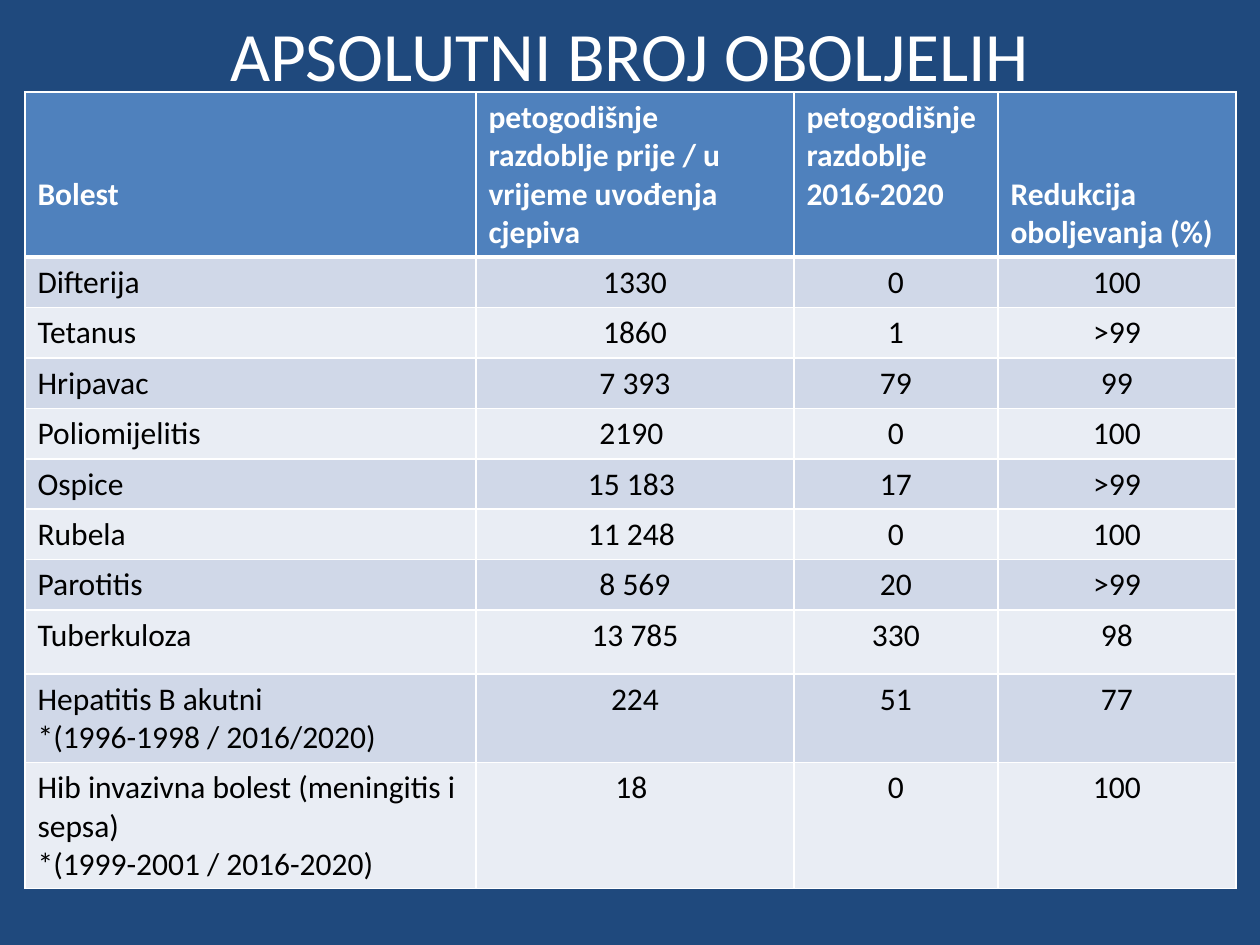
from lxml.etree import SubElement
from pptx import Presentation
from pptx.dml.color import RGBColor
from pptx.enum.text import MSO_ANCHOR, PP_ALIGN
from pptx.oxml.ns import qn
from pptx.util import Emu, Pt

PX = 914400 // 126
FONT = "Calibri"
COLORS = {
    "background": "1F497D",
    "header": "4F81BD",
    "odd": "D0D8E8",
    "even": "E9EDF4",
    "white": "FFFFFF",
    "black": "000000",
}

TITLE = "APSOLUTNI BROJ OBOLJELIH"
HEADINGS = [
    ["Bolest"],
    ["petogodišnje razdoblje prije / u vrijeme uvođenja cjepiva"],
    ["petogodišnje razdoblje", "2016-2020"],
    ["Redukcija oboljevanja (%)"],
]
DISEASES = [
    (["Difterija"], "1330", "0", "100"),
    (["Tetanus"], "1860", "1", ">99"),
    (["Hripavac"], "7 393", "79", "99"),
    (["Poliomijelitis"], "2190 ", "0", "100"),
    (["Ospice"], "15 183 ", "17", ">99"),
    (["Rubela"], "11 248 ", "0", "100"),
    (["Parotitis"], "8 569", "20", ">99"),
    (["Tuberkuloza"], "13 785", "330", "98"),
    (["Hepatitis B akutni", "*(1996-1998 / 2016/2020)"], "224", "51", "77"),
    (["Hib invazivna bolest (meningitis i sepsa)", "*(1999-2001 / 2016-2020)"],
     "18 ", "0", "100"),
]
COLUMN_WIDTHS = [451, 318, 204, 238]
ROW_HEIGHTS = [163, 48, 48, 50, 48, 48, 48, 48, 64, 84, 120]
LOWERED_HEADINGS = (0, 3)
LOWERED_MARGIN = 83


def px(value):
    return Emu(value * PX)


def rgb(name):
    return RGBColor.from_string(COLORS[name])


def write(frame, lines, size, color, align, bold=False):
    for i, line in enumerate(lines):
        paragraph = frame.paragraphs[0] if i == 0 else frame.add_paragraph()
        paragraph.alignment = align
        run = paragraph.add_run()
        run.text = line
        run.font.name = FONT
        run.font.size = Pt(size)
        run.font.bold = bold
        run.font.color.rgb = rgb(color)


def add_borders(cell, top, bottom):
    properties = cell._tc.get_or_add_tcPr()
    for side, width in (("L", 1), ("R", 1), ("T", top), ("B", bottom)):
        border = SubElement(properties, qn(f"a:ln{side}"), w=str(Pt(width)))
        fill = SubElement(border, qn("a:solidFill"))
        SubElement(fill, qn("a:srgbClr"), val=COLORS["white"])


def add_title(slide):
    title = slide.shapes.add_textbox(px(63), px(16), px(1134), px(76))
    frame = title.text_frame
    frame.word_wrap = True
    frame.vertical_anchor = MSO_ANCHOR.MIDDLE
    write(frame, [TITLE], 39.6, "white", PP_ALIGN.CENTER)


def add_disease_table(slide):
    table = slide.shapes.add_table(
        len(ROW_HEIGHTS), len(COLUMN_WIDTHS), px(25), px(92),
        px(sum(COLUMN_WIDTHS)), px(sum(ROW_HEIGHTS))).table
    for column, width in zip(table.columns, COLUMN_WIDTHS):
        column.width = px(width)
    for row, height in zip(table.rows, ROW_HEIGHTS):
        row.height = px(height)

    body = [[names] + [[value] for value in values] for names, *values in DISEASES]
    for r, row in enumerate([HEADINGS] + body):
        heading = r == 0
        band = "header" if heading else "odd" if r % 2 else "even"
        for c, lines in enumerate(row):
            cell = table.cell(r, c)
            add_borders(cell, 3 if r == 1 else 1, 3 if heading else 1)
            cell.fill.solid()
            cell.fill.fore_color.rgb = rgb(band)
            if heading and c in LOWERED_HEADINGS:
                cell.margin_top = px(LOWERED_MARGIN)
            align = PP_ALIGN.LEFT if heading or c == 0 else PP_ALIGN.CENTER
            write(cell.text_frame, lines, 18, "white" if heading else "black",
                  align, heading)


def main():
    deck = Presentation()
    deck.slide_width, deck.slide_height = px(1260), px(945)
    slide = deck.slides.add_slide(deck.slide_layouts[6])
    slide.background.fill.solid()
    slide.background.fill.fore_color.rgb = rgb("background")
    add_title(slide)
    add_disease_table(slide)
    deck.save("out.pptx")


if __name__ == "__main__":
    main()
